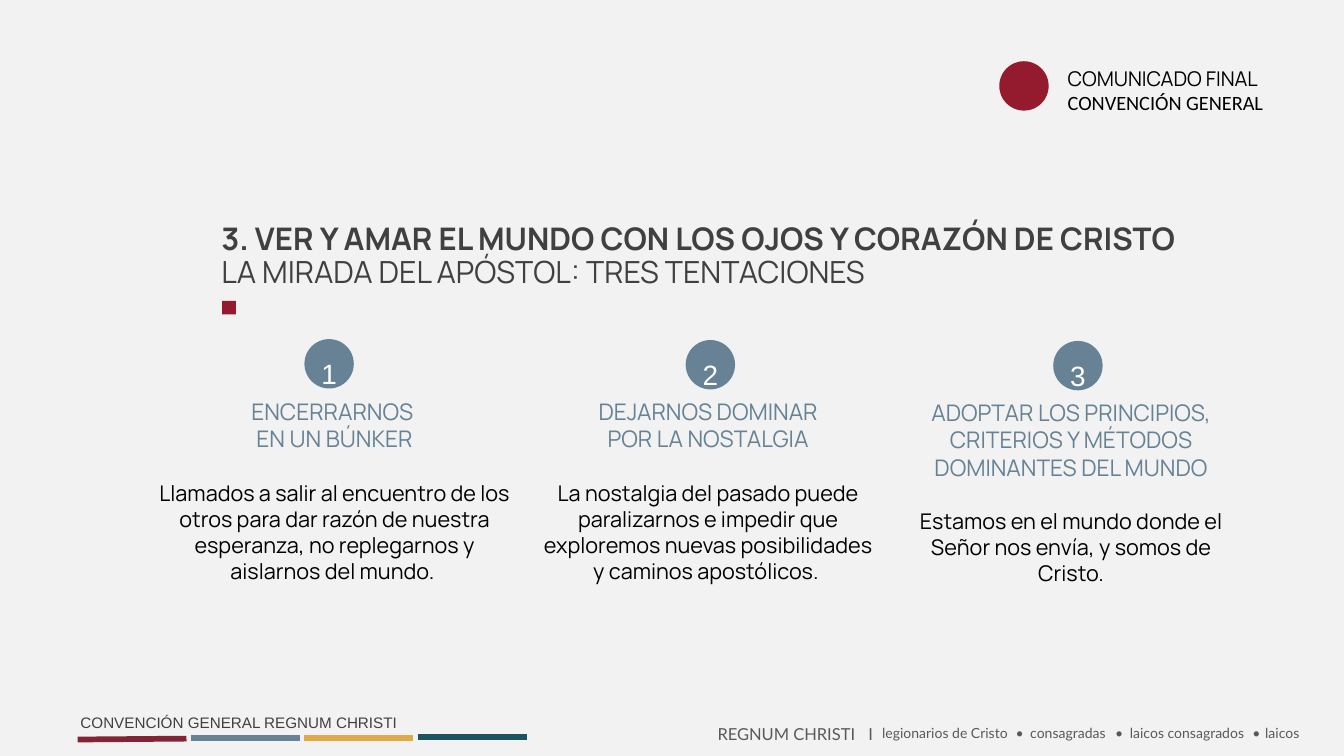
from dataclasses import dataclass

from lxml import etree
from pptx import Presentation
from pptx.dml.color import RGBColor
from pptx.enum.shapes import MSO_CONNECTOR, MSO_SHAPE
from pptx.enum.text import MSO_ANCHOR, MSO_AUTO_SIZE, PP_ALIGN
from pptx.oxml.ns import qn
from pptx.shapes.autoshape import Shape
from pptx.slide import Slide
from pptx.util import Inches, Pt

CRIMSON, STEEL, BLACK, WHITE = "941A2D", "668294", "000000", "FFFFFF"
CHARCOAL, GREY, PAPER = "404040", "595959", "F2F2F2"
DISC = 0.54


@dataclass
class Line:
    text: str
    size: float
    color: str
    font: str = "Manrope"
    bold: bool = False
    align: PP_ALIGN = PP_ALIGN.LEFT
    before: float = 0
    spacing: float | Pt | None = None
    tabs: tuple[float, ...] = ()


@dataclass
class Temptation:
    heading: list[str]
    advice: str
    left: float
    top: float
    width: float
    height: float
    disc_left: float
    disc_top: float


@dataclass
class Stripe:
    color: str
    start: float
    end: float


TEMPTATIONS = [
    Temptation(["ENCERRARNOS ", "EN UN BÚNKER"],
               "Llamados a salir al encuentro de los otros para dar razón de nuestra "
               "esperanza, no replegarnos y aislarnos del mundo. ",
               1.61, 4.3, 4.1, 2.15, 3.33, 3.71),
    Temptation(["DEJARNOS DOMINAR", "POR LA NOSTALGIA"],
               "La nostalgia del pasado puede paralizarnos e impedir que exploremos "
               "nuevas posibilidades y caminos apostólicos. ",
               5.82, 4.3, 3.85, 2.15, 7.5, 3.72),
    Temptation(["ADOPTAR LOS PRINCIPIOS, CRITERIOS Y MÉTODOS DOMINANTES DEL MUNDO"],
               "Estamos en el mundo donde el Señor nos envía, y somos de Cristo.",
               9.95, 4.31, 3.53, 2.52, 11.52, 3.73),
]
STRIPES = [
    Stripe("822435", 8.09, 8.08),
    Stripe(STEEL, 8.07, 8.07),
    Stripe("DFA94C", 8.07, 8.07),
    Stripe("1B5360", 8.06, 8.06),
]


def rgb(value: str) -> RGBColor:
    return RGBColor.from_string(value)


def write(shape: Shape, lines: list[Line], insets: tuple[float, float] = (0.1, 0.05),
          anchor: MSO_ANCHOR = MSO_ANCHOR.TOP) -> None:
    frame = shape.text_frame
    frame.word_wrap = True
    frame.auto_size = MSO_AUTO_SIZE.NONE
    frame.vertical_anchor = anchor
    frame.margin_left = frame.margin_right = Inches(insets[0])
    frame.margin_top = frame.margin_bottom = Inches(insets[1])
    frame.text = "\n".join(line.text for line in lines)
    for paragraph, line in zip(frame.paragraphs, lines):
        paragraph.alignment = line.align
        paragraph.space_before = Pt(line.before)
        if line.spacing is not None:
            paragraph.line_spacing = line.spacing
        if line.tabs:
            stops = etree.SubElement(paragraph._p.get_or_add_pPr(), qn("a:tabLst"))
            for position in line.tabs:
                etree.SubElement(stops, qn("a:tab"), pos=str(Inches(position)), algn="l")
        for run in paragraph.runs:
            run.font.name = line.font
            run.font.size = Pt(line.size)
            run.font.bold = line.bold
            run.font.color.rgb = rgb(line.color)


def add_text(slide: Slide, left: float, top: float, width: float, height: float,
             lines: list[Line], insets: tuple[float, float] = (0.1, 0.05)) -> None:
    box = slide.shapes.add_textbox(Inches(left), Inches(top), Inches(width), Inches(height))
    write(box, lines, insets)


def add_mark(slide: Slide, kind: MSO_SHAPE, left: float, top: float, side: float,
             color: str) -> Shape:
    mark = slide.shapes.add_shape(kind, Inches(left), Inches(top), Inches(side), Inches(side))
    mark.shadow.inherit = False
    mark.fill.solid()
    mark.fill.fore_color.rgb = rgb(color)
    mark.line.fill.background()
    return mark


def add_title(slide: Slide) -> None:
    title = slide.shapes.title
    title.left, title.top = Inches(2.35), Inches(2.65)
    title.width, title.height = Inches(10.87), Inches(0.55)
    write(title, [
        Line("3. VER Y AMAR EL MUNDO CON LOS OJOS Y CORAZÓN DE CRISTO", 24.5, CHARCOAL,
             bold=True, spacing=0.9),
        Line("LA MIRADA DEL APÓSTOL: TRES TENTACIONES", 24, CHARCOAL, spacing=0.9),
    ], (0.07, 0.03), MSO_ANCHOR.BOTTOM)
    add_mark(slide, MSO_SHAPE.RECTANGLE, 2.43, 3.29, 0.15, CRIMSON)


def add_temptation(slide: Slide, number: int, item: Temptation) -> None:
    disc = add_mark(slide, MSO_SHAPE.OVAL, item.disc_left, item.disc_top, DISC, STEEL)
    write(disc, [Line(str(number), 22, WHITE, "Arial", align=PP_ALIGN.CENTER)], (0, 0))
    disc.text_frame.margin_top = Inches(0.11)
    lines = [Line(text, 18, STEEL, align=PP_ALIGN.CENTER) for text in item.heading]
    lines.append(Line(item.advice, 17, BLACK, align=PP_ALIGN.CENTER, before=21.5))
    add_text(slide, item.left, item.top, item.width, item.height, lines)


def add_stripe(slide: Slide, index: int, stripe: Stripe) -> None:
    left = 0.85 + 1.24 * index
    line = slide.shapes.add_connector(MSO_CONNECTOR.STRAIGHT, Inches(left), Inches(stripe.start),
                                      Inches(left + 1.19), Inches(stripe.end))
    line.line.color.rgb = rgb(stripe.color)
    line.line.width = Pt(4.5)
    etree.SubElement(line._element.spPr, qn("a:effectLst"))


def add_header(slide: Slide) -> None:
    add_mark(slide, MSO_SHAPE.OVAL, 10.93, 0.67, DISC, CRIMSON)
    add_text(slide, 11.58, 0.67, 2.6, 0.64, [
        Line("COMUNICADO FINAL", 16, BLACK),
        Line("CONVENCIÓN GENERAL", 16, BLACK, "Calibri"),
    ])


def add_footer(slide: Slide) -> None:
    for index, stripe in enumerate(STRIPES):
        add_stripe(slide, index, stripe)
    add_text(slide, 0.88, 7.61, 6.95, 0.33, [
        Line("CONVENCIÓN GENERAL REGNUM CHRISTI", 12, CHARCOAL, "Arial", spacing=Pt(28.1)),
    ], (0, 0))
    add_text(slide, 7.75, 7.87, 2, 0.32, [
        Line("REGNUM CHRISTI\tI", 13, GREY, "Lato", tabs=(1.65,)),
    ])
    branches = ["legionarios de Cristo", "consagradas", "laicos consagrados", "laicos"]
    add_text(slide, 9.55, 7.88, 5.1, 0.3, [
        Line("\t•\t".join(branches), 11, GREY, "Lato",
             tabs=(1.46, 1.62, 2.55, 2.71, 4.05, 4.19)),
    ])


def main() -> None:
    deck = Presentation()
    deck.slide_width, deck.slide_height = Inches(14.7), Inches(8.27)
    slide = deck.slides.add_slide(deck.slide_layouts[5])
    slide.background.fill.solid()
    slide.background.fill.fore_color.rgb = rgb(PAPER)
    add_title(slide)
    for number, item in enumerate(TEMPTATIONS, 1):
        add_temptation(slide, number, item)
    add_header(slide)
    add_footer(slide)
    deck.save("out.pptx")


if __name__ == "__main__":
    main()
